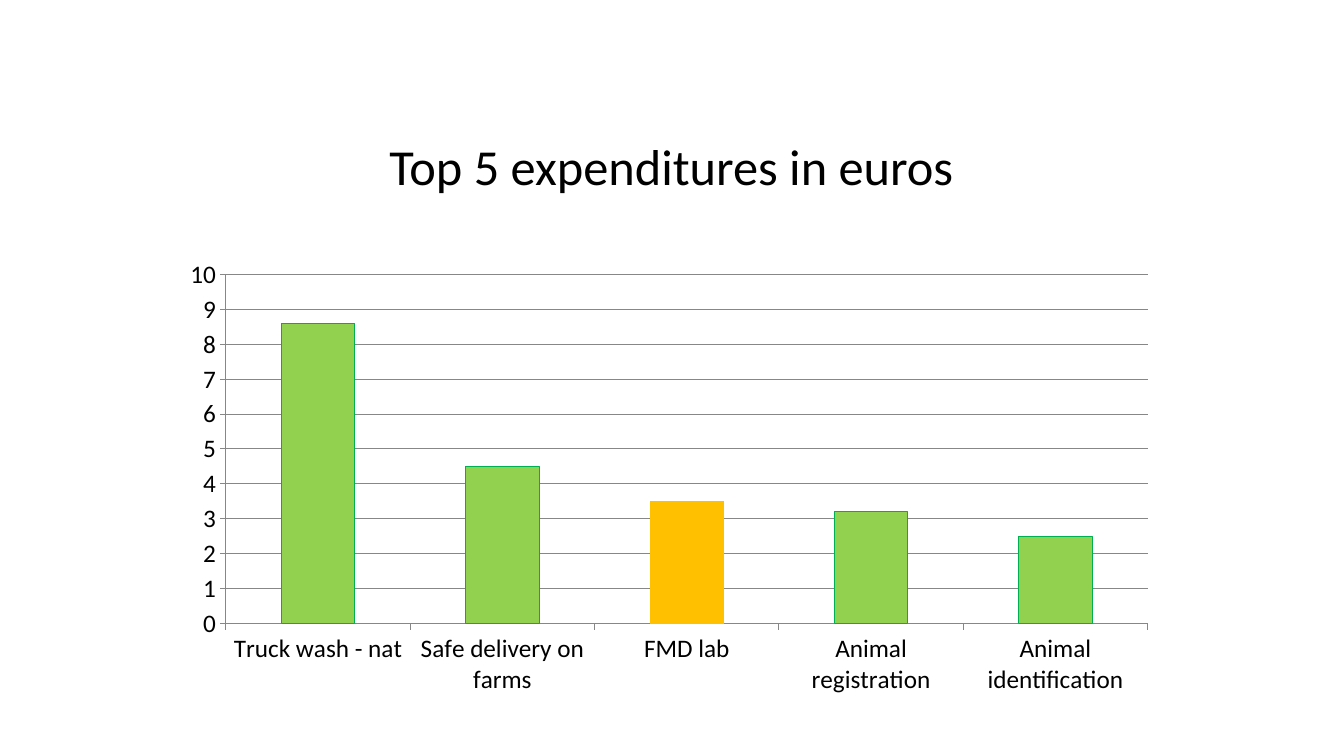
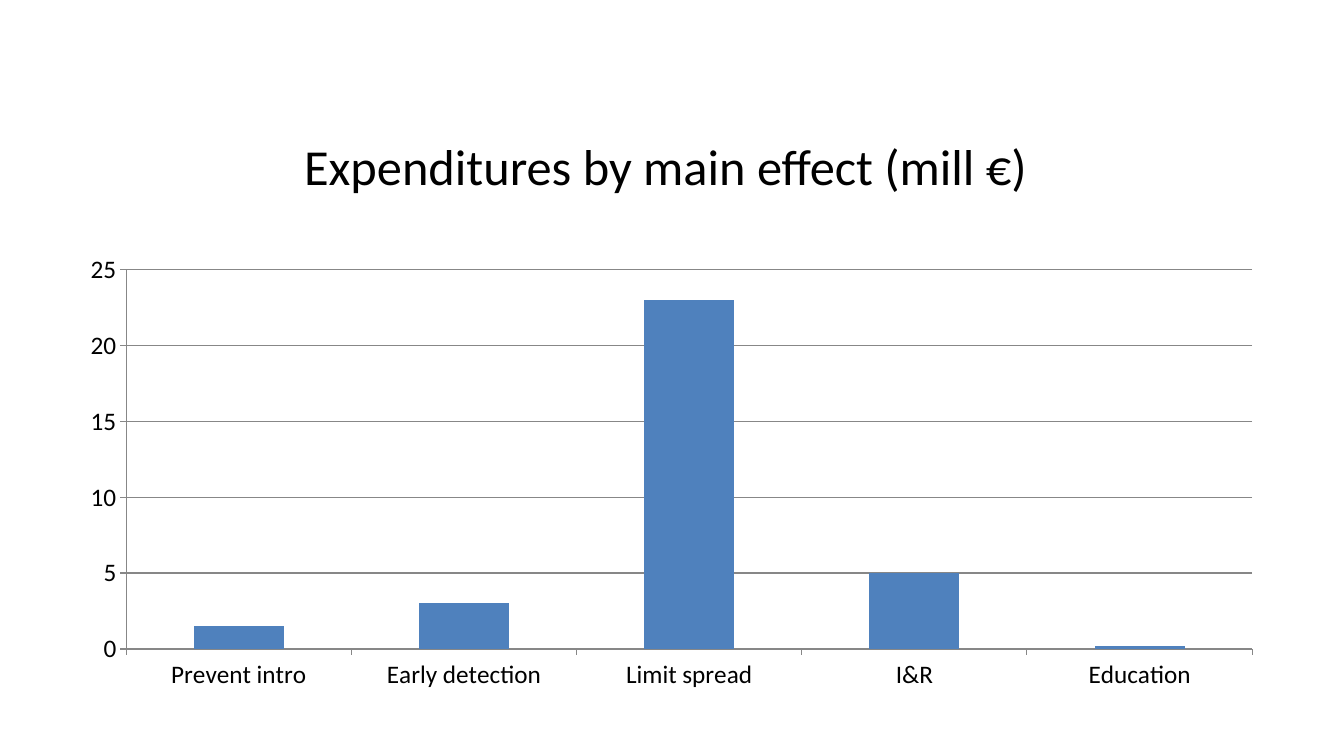
from dataclasses import dataclass

from pptx import Presentation
from pptx.chart.data import CategoryChartData
from pptx.dml.color import RGBColor
from pptx.enum.chart import XL_CHART_TYPE, XL_TICK_MARK
from pptx.enum.text import MSO_ANCHOR, PP_ALIGN
from pptx.util import Inches, Pt


@dataclass(frozen=True)
class Theme:
    """Colours, type sizes and line width shared by the slides."""

    font: str = "Calibri"
    title_size: int = 36
    chart_size: int = 18
    line_width: float = 0.75
    text: str = "000000"
    rule: str = "878787"
    bar: str = "4F81BD"
    green: str = "92D050"
    green_edge: str = "00B050"
    amber: str = "FFC000"


THEME = Theme()
TITLE_ONLY = 5
TITLE_BOX = (4.95, 13.47, 90.02, 16.67)


def percent_box(deck, shares):
    """Turn left, top, width and height in percent into slide lengths."""
    sides = (deck.slide_width, deck.slide_height) * 2
    return [round(side * share / 100) for side, share in zip(sides, shares)]


def style_font(font, size, color):
    """Apply the theme font with a size and colour."""
    font.name = THEME.font
    font.size = Pt(size)
    font.color.rgb = RGBColor.from_string(color)


def style_line(line, color):
    """Draw a thin line in the given colour."""
    line.width = Pt(THEME.line_width)
    line.color.rgb = RGBColor.from_string(color)


def style_fill(fill, color):
    """Fill with one solid colour."""
    fill.solid()
    fill.fore_color.rgb = RGBColor.from_string(color)


def write_text(frame, text, *, size, color=THEME.text, align=PP_ALIGN.CENTER,
               anchor=MSO_ANCHOR.MIDDLE):
    """Write one formatted paragraph into a text frame."""
    frame.word_wrap = True
    frame.vertical_anchor = anchor
    para = frame.paragraphs[0]
    para.alignment = align
    span = para.add_run()
    span.text = text
    style_font(span.font, size, color)


def add_title(page, box, text):
    """Move the title placeholder to its box and write the title."""
    title = page.shapes.title
    title.left, title.top, title.width, title.height = box
    write_text(title.text_frame, text, size=THEME.title_size)


def style_axes(chart, top, step):
    """Format both axes and scale the value axis."""
    for axis in (chart.category_axis, chart.value_axis):
        axis.major_tick_mark = XL_TICK_MARK.OUTSIDE
        axis.minor_tick_mark = XL_TICK_MARK.NONE
        style_line(axis.format.line, THEME.rule)
        style_font(axis.tick_labels.font, THEME.chart_size, THEME.text)
    values = chart.value_axis
    values.minimum_scale, values.maximum_scale = 0, top
    values.major_unit = step
    values.has_major_gridlines = True
    style_line(values.major_gridlines.format.line, THEME.rule)


def add_column_chart(page, box, values, top, step, point_styles=()):
    """Add a one-series column chart with optional colours by point."""
    data = CategoryChartData()
    data.categories = list(values)
    data.add_series("Series 1", list(values.values()))
    chart = page.shapes.add_chart(XL_CHART_TYPE.COLUMN_CLUSTERED, *box, data).chart
    chart.has_legend = False
    chart.has_title = False
    style_font(chart.font, THEME.chart_size, THEME.text)
    style_axes(chart, top, step)
    plot = chart.plots[0]
    plot.gap_width = 150
    plot.vary_by_categories = False
    series = plot.series[0]
    style_fill(series.format.fill, THEME.bar)
    for index, (fill, edge) in enumerate(point_styles):
        point = series.points[index].format
        style_fill(point.fill, fill)
        if edge:
            style_line(point.line, edge)


def add_chart_page(deck, title, chart_box, **chart_options):
    """Add a slide with a title above a column chart."""
    page = deck.slides.add_slide(deck.slide_layouts[TITLE_ONLY])
    add_title(page, percent_box(deck, TITLE_BOX), title)
    add_column_chart(page, percent_box(deck, chart_box), **chart_options)


def main():
    """Build and save the two expenditure slides."""
    deck = Presentation()
    deck.slide_width, deck.slide_height = Inches(13.33), Inches(7.5)
    green, amber = (THEME.green, THEME.green_edge), (THEME.amber, None)
    add_chart_page(
        deck, "Top 5 expenditures in euros", (12.68, 33.07, 74.19, 60),
        values={"Truck wash - nat": 8.6, "Safe delivery on farms": 4.5,
                "FMD lab": 3.5, "Animal registration": 3.2,
                "Animal identification": 2.5},
        top=10, step=1, point_styles=(green, green, amber, green, green))
    add_chart_page(
        deck, "Expenditures by main effect (mill €) ", (4.95, 32.4, 90.02, 60),
        values={"Prevent intro": 1.5, "Early detection": 3, "Limit spread": 23,
                "I&R": 5, "Education": 0.2},
        top=25, step=5)
    deck.save("out.pptx")


if __name__ == "__main__":
    main()
